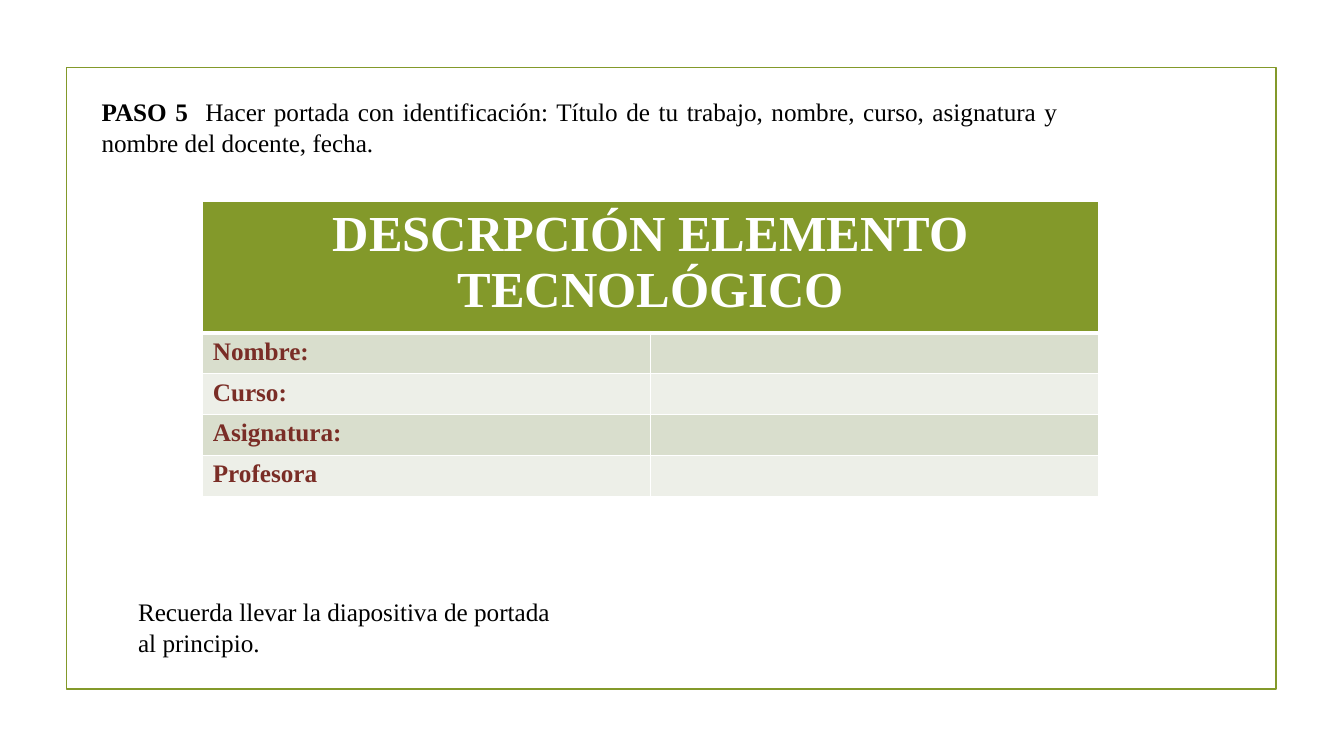
from lxml.etree import SubElement
from pptx import Presentation
from pptx.dml.color import RGBColor
from pptx.enum.shapes import MSO_SHAPE
from pptx.enum.text import PP_ALIGN
from pptx.oxml.ns import qn
from pptx.util import Cm, Pt

FONT = "Times New Roman"
GREEN = "83992A"
WHITE = "FFFFFF"
BAND_FILLS = ("D9DECD", "EDEFE8")
FIELDS = ("Nombre:", "Curso:", "Asignatura:", "Profesora")


def color(value):
    return RGBColor.from_string(value)


def write_text(paragraph, text, size=18, fill="000000", bold=False, align=PP_ALIGN.LEFT):
    paragraph.alignment = align
    run = paragraph.add_run()
    run.text = text
    run.font.name = FONT
    run.font.size = Pt(size)
    run.font.bold = bold
    run.font.color.rgb = color(fill)


def add_frame(slide):
    shape = slide.shapes.add_shape(MSO_SHAPE.RECTANGLE, Cm(1.68), Cm(1.7), Cm(30.48), Cm(15.67))
    shape.shadow.inherit = False
    shape.fill.background()
    shape.line.color.rgb = color(GREEN)
    shape.line.width = Pt(1.25)


def add_text_box(slide, left, top, width, height):
    text_frame = slide.shapes.add_textbox(Cm(left), Cm(top), Cm(width), Cm(height)).text_frame
    text_frame.word_wrap = True
    return text_frame.paragraphs[0]


def format_cell(cell, fill, bottom_width=1, top_width=1):
    properties = cell._tc.get_or_add_tcPr()
    widths = {"a:lnL": 1, "a:lnR": 1, "a:lnT": top_width, "a:lnB": bottom_width}
    for tag, width in widths.items():
        border = SubElement(properties, qn(tag), w=str(Pt(width)))
        SubElement(SubElement(border, qn("a:solidFill")), qn("a:srgbClr"), val=WHITE)
    cell.fill.solid()
    cell.fill.fore_color.rgb = color(fill)


def add_cover_table(slide):
    row_count = len(FIELDS) + 1
    frame = slide.shapes.add_table(row_count, 2, Cm(5.11), Cm(5.08), Cm(22.58), Cm(7.42))
    table = frame.table
    table.rows[0].height = Cm(3.3)
    for cell in table.rows[0].cells:
        format_cell(cell, GREEN, bottom_width=3)
    title = table.cell(0, 0)
    title.merge(table.cell(0, 1))
    write_text(title.text_frame.paragraphs[0], "DESCRPCIÓN ELEMENTO TECNOLÓGICO",
               size=36, fill=WHITE, bold=True, align=PP_ALIGN.CENTER)
    for index, field in enumerate(FIELDS):
        row = table.rows[index + 1]
        row.height = Cm(1.03)
        for cell in row.cells:
            format_cell(cell, BAND_FILLS[index % 2], top_width=1 if index else 3)
        write_text(row.cells[0].text_frame.paragraphs[0], field, fill="7A2D26", bold=True)


def main():
    presentation = Presentation()
    presentation.slide_width = Cm(33.87)
    presentation.slide_height = Cm(19.05)
    slide = presentation.slides.add_slide(presentation.slide_layouts[6])
    add_frame(slide)
    step = add_text_box(slide, 2.31, 2.31, 24.61, 1.8)
    write_text(step, "PASO 5  ", bold=True, align=PP_ALIGN.JUSTIFY)
    write_text(step, "Hacer portada con identificación: Título de tu trabajo, nombre, curso, "
               "asignatura y nombre del docente, fecha.", align=PP_ALIGN.JUSTIFY)
    add_cover_table(slide)
    reminder = add_text_box(slide, 3.23, 14.91, 11.18, 1.8)
    write_text(reminder, "Recuerda llevar la diapositiva de portada al principio.")
    presentation.save("out.pptx")


if __name__ == "__main__":
    main()
